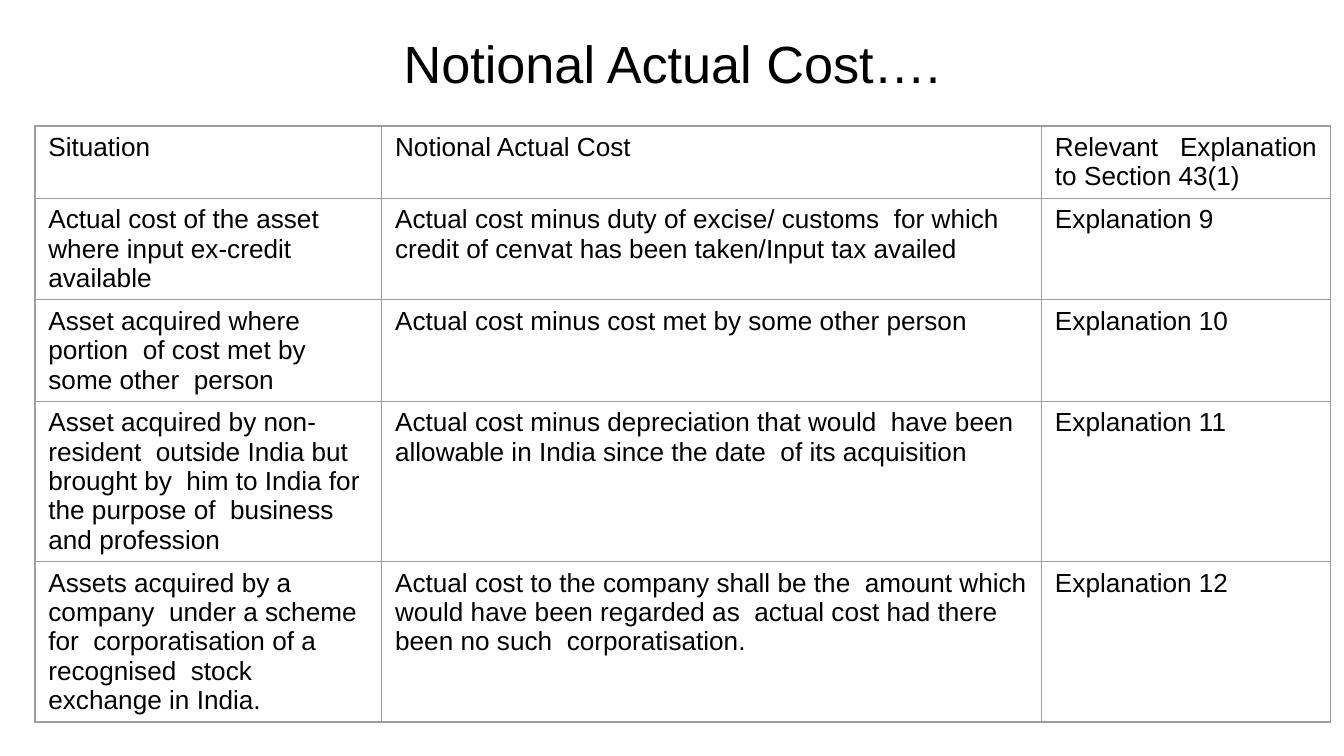
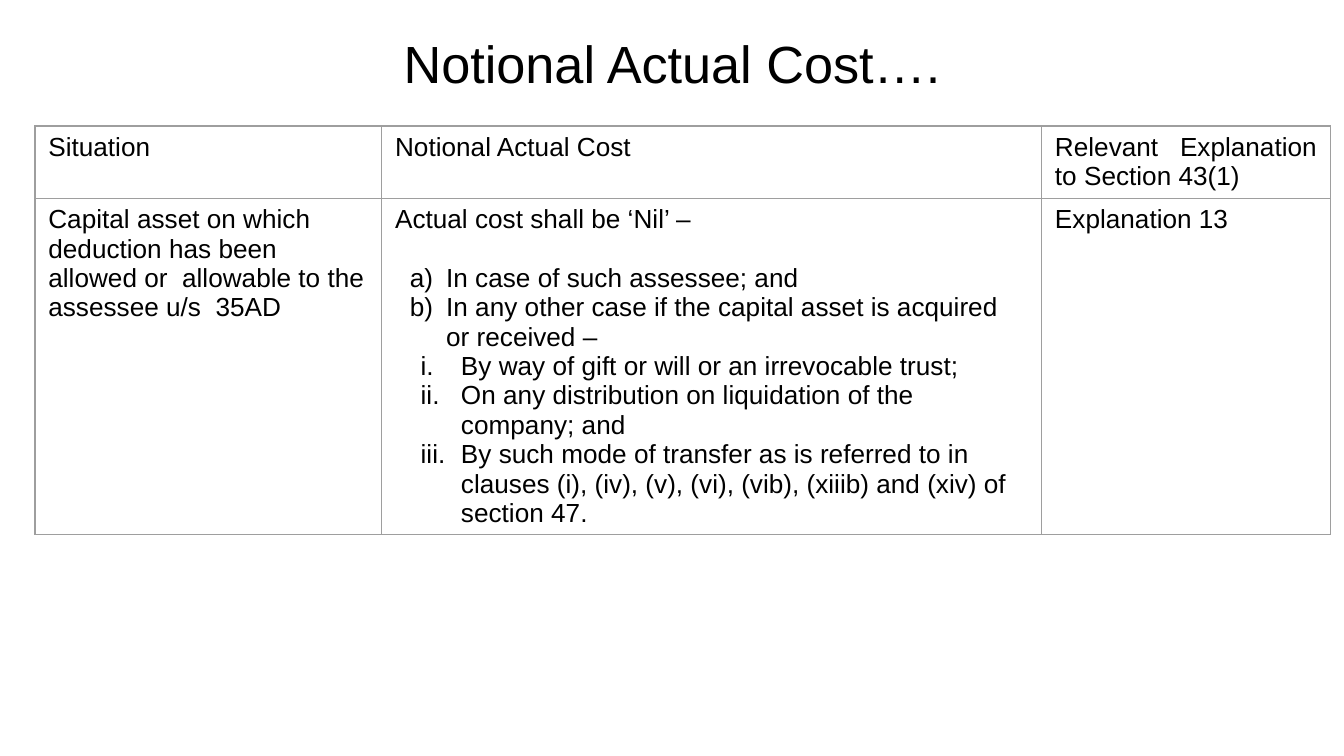
"""Two slides of tables on the notional actual cost of assets."""
from dataclasses import dataclass
from typing import Any, Optional, Union

from lxml.etree import SubElement
from pptx import Presentation
from pptx.dml.color import RGBColor
from pptx.enum.text import MSO_ANCHOR as Anchor, PP_ALIGN as Align
from pptx.oxml.ns import qn
from pptx.util import Inches, Pt


@dataclass(frozen=True)
class Theme:
    """Colours, type sizes and line widths of the deck."""
    font: str = "Arial"
    ink: str = "000000"
    rule: str = "9E9E9E"
    rule_width: float = 0.75
    title_size: float = 28
    body_size: float = 14
    line_gap: float = 15.8


@dataclass(frozen=True)
class Numbering:
    """A numbered list style with its indents in inches."""
    scheme: str
    margin: float
    hanging: float


@dataclass(frozen=True)
class Para:
    """A paragraph of a cell with its formatting."""
    text: str
    align: Optional[Align] = None
    numbering: Optional[Numbering] = None
    gap_after: bool = False


CellText = Union[str, Para, list[Para]]
CostRow = tuple[CellText, CellText, CellText]

THEME = Theme()
WIDTH, HEIGHT = Inches(10), Inches(5.625)
TITLE_BOX = (0.05, 0, 0.9, 1 / 6)
TABLE_LEFT, TABLE_TOP = 0.026, 1 / 6
COLUMN_SHARES = (0.258, 0.491, 0.215)
ROW_SHARE = 0.073

TITLE = "Notional Actual Cost…."
LETTERS = Numbering("alphaLcParenR", 0.38, 0.27)
ROMANS = Numbering("romanLcPeriod", 0.49, 0.3)

HEADINGS: CostRow = (
    "Situation",
    "Notional Actual Cost",
    Para("Relevant Explanation to Section 43(1)", align=Align.JUSTIFY),
)

ACQUIRED_ASSETS: list[CostRow] = [
    ("Actual cost of the asset where input ex-credit available",
     "Actual cost minus duty of excise/ customs  for which credit of cenvat has been taken/Input tax availed",
     "Explanation 9"),
    ("Asset acquired where portion  of cost met by some other  person",
     "Actual cost minus cost met by some other person",
     "Explanation 10"),
    ("Asset acquired by non-resident  outside India but brought by  him to India for the purpose of  business and profession",
     "Actual cost minus depreciation that would  have been allowable in India since the date  of its acquisition",
     "Explanation 11"),
    ("Assets acquired by a company  under a scheme for  corporatisation of a recognised  stock exchange in India.",
     "Actual cost to the company shall be the  amount which would have been regarded as  actual cost had there been no such  corporatisation.",
     "Explanation 12"),
]

DEDUCTED_ASSETS: list[CostRow] = [
    ("Capital asset on which  deduction has been allowed or  allowable to the assessee u/s  35AD",
     [Para("Actual cost shall be ‘Nil’ –", gap_after=True),
      Para("In case of such assessee; and", numbering=LETTERS),
      Para("In any other case if the capital asset is acquired or received –", numbering=LETTERS),
      Para("By way of gift or will or an irrevocable trust;", numbering=ROMANS),
      Para("On any distribution on liquidation of the company; and", numbering=ROMANS),
      Para("By such mode of transfer as is referred to in clauses (i), (iv), (v), (vi), (vib), (xiiib) and (xiv) of section 47.",
           numbering=ROMANS)],
     "Explanation 13"),
]


def apply(target: Any, values: dict[str, Any]) -> None:
    """Set each named attribute of the target."""
    for name, value in values.items():
        setattr(target, name, value)


def style_font(font: Any, size: float) -> None:
    """Give a font the theme's face and ink at a size."""
    apply(font, {"name": THEME.font, "size": Pt(size), "bold": False})
    font.color.rgb = RGBColor.from_string(THEME.ink)


def add_solid(parent: Any, tag: str, colour: str) -> None:
    """Append a colour element under the given tag."""
    SubElement(SubElement(parent, qn(tag)), qn("a:srgbClr"), val=colour)


def number_paragraph(paragraph: Any, numbering: Numbering) -> None:
    """Turn a paragraph into an automatically numbered item."""
    properties = paragraph._p.get_or_add_pPr()
    properties.set("marL", str(Inches(numbering.margin)))
    properties.set("indent", str(-Inches(numbering.hanging)))
    add_solid(properties, "a:buClr", THEME.ink)
    SubElement(properties, qn("a:buFont"), typeface=THEME.font)
    SubElement(properties, qn("a:buAutoNum"), type=numbering.scheme)


def rule_cell(cell: Any) -> None:
    """Draw the four borders of a cell and clear its fill."""
    properties = cell._tc.get_or_add_tcPr()
    for side in ("L", "R", "T", "B"):
        border = SubElement(properties, qn(f"a:ln{side}"), w=str(Pt(THEME.rule_width)))
        add_solid(border, "a:solidFill", THEME.rule)
    cell.fill.background()


def write_cell(cell: Any, content: CellText) -> None:
    """Write the paragraphs of a cell."""
    if isinstance(content, str):
        content = Para(content)
    paras = content if isinstance(content, list) else [content]
    frame = cell.text_frame
    for index, para in enumerate(paras):
        paragraph = frame.add_paragraph() if index else frame.paragraphs[0]
        paragraph.alignment = para.align
        if para.gap_after:
            paragraph.space_after = Pt(THEME.line_gap)
        if para.numbering:
            number_paragraph(paragraph, para.numbering)
        run = paragraph.add_run()
        run.text = para.text
        style_font(run.font, THEME.body_size)


def add_title(slide: Any) -> None:
    """Place and format the shared slide title."""
    title = slide.shapes.title
    left, top, width, height = TITLE_BOX
    apply(title, {"left": int(left * WIDTH), "top": int(top * HEIGHT),
                  "width": int(width * WIDTH), "height": int(height * HEIGHT)})
    title.text_frame.text = TITLE
    title.text_frame.vertical_anchor = Anchor.MIDDLE
    heading = title.text_frame.paragraphs[0]
    heading.alignment = Align.CENTER
    style_font(heading.runs[0].font, THEME.title_size)


def add_cost_table(slide: Any, cost_rows: list[CostRow]) -> None:
    """Add the ruled cost table under the shared headings."""
    lines = [HEADINGS, *cost_rows]
    table = slide.shapes.add_table(
        len(lines), len(COLUMN_SHARES),
        int(TABLE_LEFT * WIDTH), int(TABLE_TOP * HEIGHT),
        int(sum(COLUMN_SHARES) * WIDTH), int(len(lines) * ROW_SHARE * HEIGHT),
    ).table
    apply(table, {"first_row": False, "horz_banding": False})
    for column, share in zip(table.columns, COLUMN_SHARES):
        column.width = int(share * WIDTH)
    for row, contents in zip(table.rows, lines):
        for cell, content in zip(row.cells, contents):
            rule_cell(cell)
            write_cell(cell, content)


def main() -> None:
    """Build and save the deck."""
    deck = Presentation()
    apply(deck, {"slide_width": WIDTH, "slide_height": HEIGHT})
    for cost_rows in (ACQUIRED_ASSETS, DEDUCTED_ASSETS):
        slide = deck.slides.add_slide(deck.slide_layouts[5])
        add_title(slide)
        add_cost_table(slide, cost_rows)
    deck.save("out.pptx")


if __name__ == "__main__":
    main()
